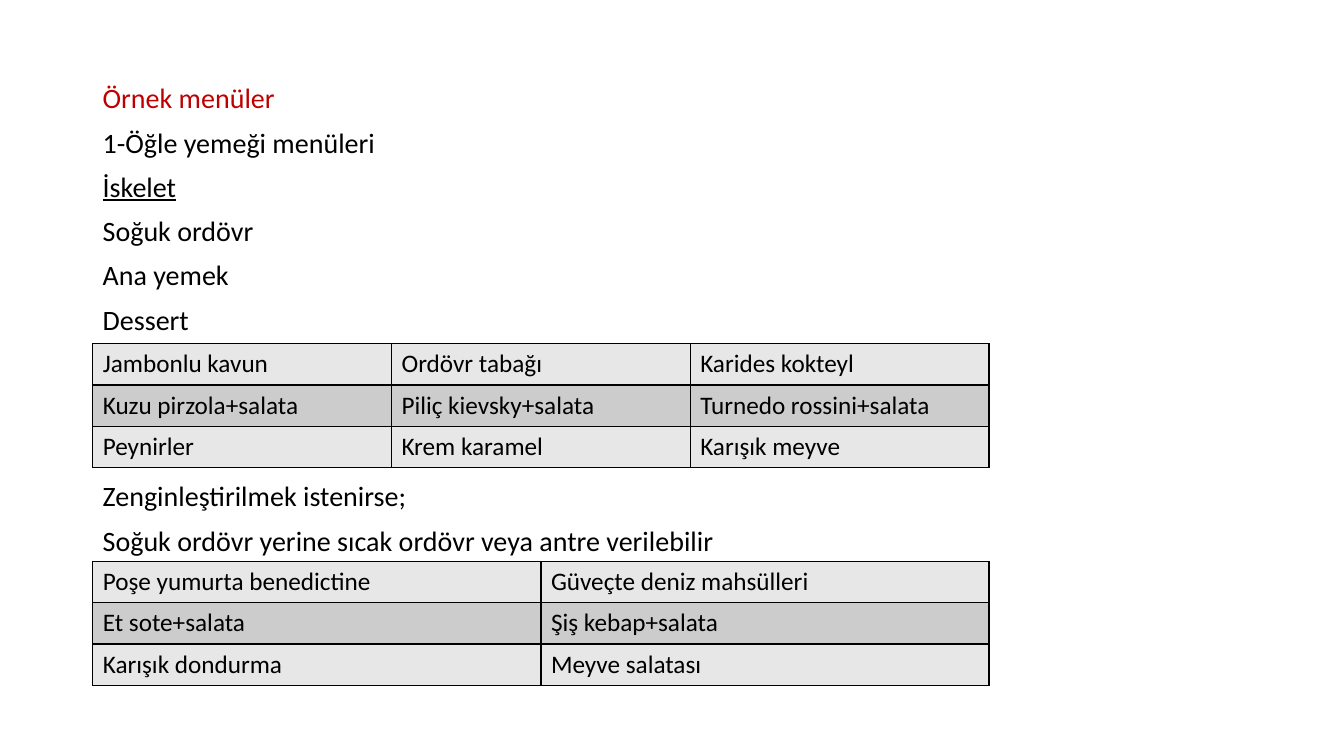
from dataclasses import dataclass

from lxml import etree
from pptx import Presentation, util as u
from pptx.dml.color import RGBColor
from pptx.oxml import ns

SCALE = 9144
FONT = "Calibri"
LEFT = 92
ROW = 41
BLACK = "000000"
RED = "C00000"
BANDS = ("E7E7E7", "CCCCCC")


@dataclass
class Line:
    words: str
    color: str = BLACK
    under: bool = False


@dataclass
class Block:
    top: int
    height: int
    lines: list[Line]


@dataclass
class Menu:
    top: int
    rows: list[list[str]]


BLOCKS = [
    Block(79, 270, [
        Line("Örnek menüler", RED),
        Line("1-Öğle yemeği menüleri"),
        Line("İskelet", under=True),
        Line("Soğuk ordövr"),
        Line("Ana yemek"),
        Line("Dessert"),
    ]),
    Block(474, 90, [
        Line("Zenginleştirilmek istenirse;"),
        Line("Soğuk ordövr yerine sıcak ordövr veya antre verilebilir"),
    ]),
]

MENUS = [
    Menu(341, [
        ["Jambonlu kavun", "Ordövr tabağı", "Karides kokteyl"],
        ["Kuzu pirzola+salata", "Piliç kievsky+salata", "Turnedo rossini+salata"],
        ["Peynirler", "Krem karamel", "Karışık meyve"],
    ]),
    Menu(557, [
        ["Poşe yumurta benedictine", "Güveçte deniz mahsülleri"],
        ["Et sote+salata", "Şiş kebap+salata"],
        ["Karışık dondurma", "Meyve salatası"],
    ]),
]


def px(n: int) -> u.Emu:
    return u.Emu(n * SCALE)


def rgb(code: str) -> RGBColor:
    return RGBColor.from_string(code)


def style(para, size: int, color: str = BLACK, under: bool = False) -> None:
    for run in para.runs:
        run.font.name = FONT
        run.font.size = u.Pt(size)
        run.font.color.rgb = rgb(color)
        if under:
            run.font.underline = True


def border(cell) -> None:
    props = cell._tc.get_or_add_tcPr()
    for spot, side in enumerate(("lnL", "lnR", "lnT", "lnB")):
        edge = etree.Element(ns.qn(f"a:{side}"), w=str(u.Pt(1)))
        fill = etree.SubElement(edge, ns.qn("a:solidFill"))
        etree.SubElement(fill, ns.qn("a:srgbClr"), val=BLACK)
        props.insert(spot, edge)


def write(slide, block: Block) -> None:
    box = slide.shapes.add_textbox(px(LEFT), px(block.top), px(1150), px(block.height))
    frame = box.text_frame
    frame.word_wrap = True
    frame.text = "\n".join(line.words for line in block.lines)
    for para, line in zip(frame.paragraphs, block.lines):
        para.line_spacing = 0.9
        para.space_before = u.Pt(10)
        style(para, 20, line.color, line.under)


def serve(slide, menu: Menu) -> None:
    rows, cols = len(menu.rows), len(menu.rows[0])
    frame = slide.shapes.add_table(
        rows, cols, px(LEFT), px(menu.top), px(889), px(rows * ROW))
    table = frame.table
    for r, dishes in enumerate(menu.rows):
        table.rows[r].height = px(ROW)
        for c, dish in enumerate(dishes):
            cell = table.cell(r, c)
            cell.text_frame.text = dish
            style(cell.text_frame.paragraphs[0], 18)
            cell.fill.solid()
            cell.fill.fore_color.rgb = rgb(BANDS[r % 2])
            border(cell)


def main() -> None:
    deck = Presentation()
    deck.slide_width, deck.slide_height = px(1333), px(750)
    slide = deck.slides.add_slide(deck.slide_layouts[6])
    for block in BLOCKS:
        write(slide, block)
    for menu in MENUS:
        serve(slide, menu)
    deck.save("out.pptx")


if __name__ == "__main__":
    main()
